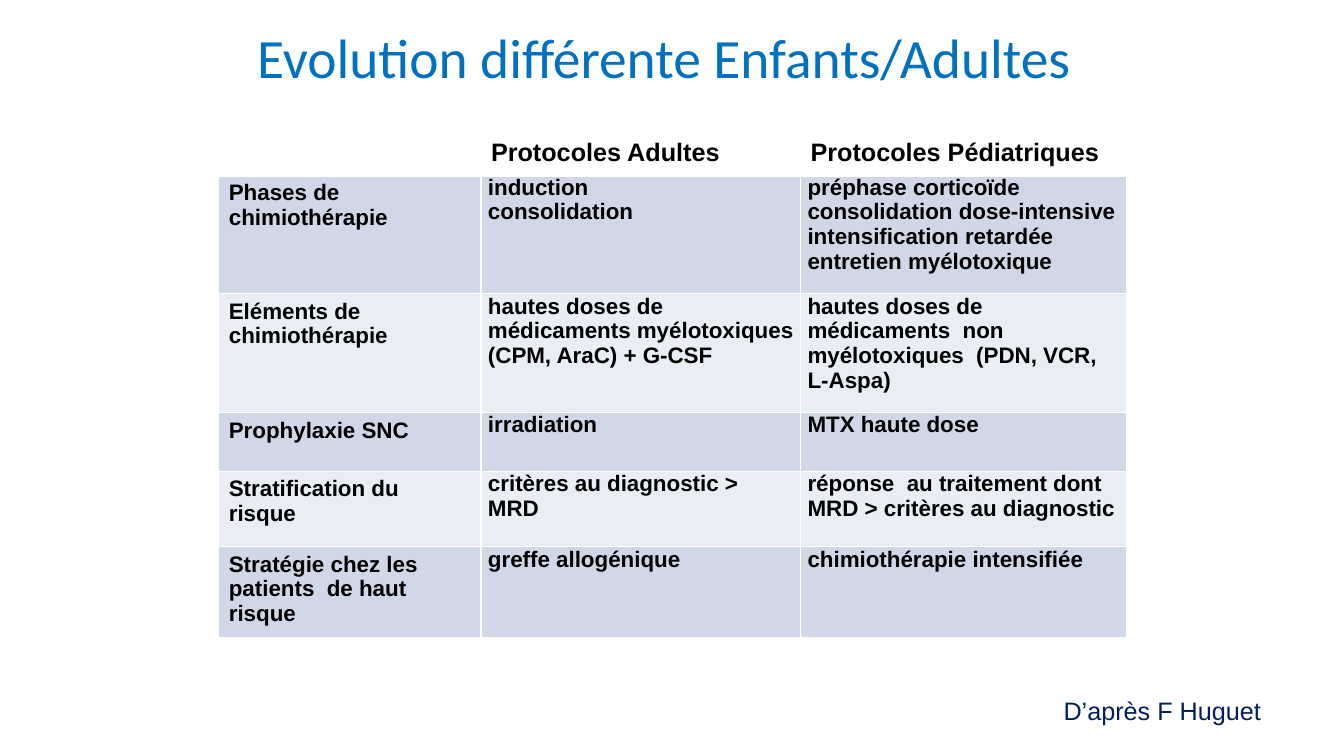
from lxml import etree
from pptx import Presentation
from pptx import util as u
from pptx.dml.color import RGBColor
from pptx.enum import text
from pptx.oxml import ns

WHITE = RGBColor(0xFF, 0xFF, 0xFF)
BLACK = RGBColor(0, 0, 0)
BLUE = RGBColor(0x00, 0x70, 0xC0)
NAVY = RGBColor(0x00, 0x20, 0x60)
BANDS = (RGBColor(0xD0, 0xD8, 0xE8), RGBColor(0xE9, 0xED, 0xF4))

COLUMN_WIDTHS = (2.6, 3.17, 3.23)
ROW_HEIGHTS = (0.4, 1.18, 1.18, 0.58, 0.75, 0.9)
LABEL_MARGINS = (0.1, 0.05)
DETAIL_MARGINS = (0.07, 0)

PROTOCOLS = (
    ("", "Protocoles Adultes", "Protocoles Pédiatriques"),
    ("Phases de chimiothérapie",
     "induction\nconsolidation",
     "préphase corticoïde\nconsolidation dose-intensive\n"
     "intensification retardée\nentretien myélotoxique"),
    ("Eléments de chimiothérapie",
     "hautes doses de médicaments myélotoxiques (CPM, AraC) + G-CSF",
     "hautes doses de médicaments  non myélotoxiques  (PDN, VCR, L-Aspa)"),
    ("Prophylaxie SNC", "irradiation", "MTX haute dose"),
    ("Stratification du risque",
     "critères au diagnostic > MRD",
     "réponse  au traitement dont MRD > critères au diagnostic"),
    ("Stratégie chez les patients  de haut risque",
     "greffe allogénique", "chimiothérapie intensifiée"),
)


def write(frame, words, size, color=BLACK, font="Arial", bold=False,
          align=text.PP_ALIGN.LEFT, spacing=1.0):
    """Fill a text frame, one paragraph per line of words."""
    frame.word_wrap = True
    frame.text = words
    for paragraph in frame.paragraphs:
        paragraph.alignment = align
        paragraph.line_spacing = spacing
        for run in paragraph.runs:
            run.font.name = font
            run.font.size = u.Pt(size)
            run.font.bold = bold
            run.font.color.rgb = color


def set_borders(cell, **widths):
    """White cell borders; widths in points, keyed by side letter."""
    properties = cell._tc.get_or_add_tcPr()
    for position, side in enumerate("LRTB"):
        line = etree.Element(ns.qn(f"a:ln{side}"), w=str(u.Pt(widths.get(side, 1))))
        fill = etree.SubElement(line, ns.qn("a:solidFill"))
        etree.SubElement(fill, ns.qn("a:srgbClr"), val=str(WHITE))
        properties.insert(position, line)


def add_title(slide, left, top, width, height):
    title = slide.shapes.title
    title.left, title.top = u.Inches(left), u.Inches(top)
    title.width, title.height = u.Inches(width), u.Inches(height)
    title.text_frame.vertical_anchor = text.MSO_ANCHOR.MIDDLE
    title.text_frame.auto_size = text.MSO_AUTO_SIZE.NONE
    write(title.text_frame, "Evolution différente Enfants/Adultes", 39.6,
          color=BLUE, font="Calibri", align=text.PP_ALIGN.CENTER, spacing=0.9)


def add_protocol_table(slide, left, top):
    frame = slide.shapes.add_table(
        len(ROW_HEIGHTS), len(COLUMN_WIDTHS), u.Inches(left), u.Inches(top),
        u.Inches(sum(COLUMN_WIDTHS)), u.Inches(sum(ROW_HEIGHTS)))
    table = frame.table
    table.first_row = table.horz_banding = False
    for column, width in zip(table.columns, COLUMN_WIDTHS):
        column.width = u.Inches(width)
    for row, height in zip(table.rows, ROW_HEIGHTS):
        row.height = u.Inches(height)

    for r, entries in enumerate(PROTOCOLS):
        for c, entry in enumerate(entries):
            cell = table.cell(r, c)
            is_label = r == 0 or c == 0
            side, edge = LABEL_MARGINS if is_label else DETAIL_MARGINS
            cell.margin_left = cell.margin_right = u.Inches(side)
            cell.margin_top = cell.margin_bottom = u.Inches(edge)
            write(cell.text_frame, entry, 18 if r == 0 else 16, bold=True)
            # Header row stays clear, body rows alternate
            if r == 0:
                cell.fill.background()
            else:
                cell.fill.solid()
                cell.fill.fore_color.rgb = BANDS[(r - 1) % 2]
            set_borders(cell, T=3 if r == 1 else 1, B=3 if r == 0 else 1)


def add_credit(slide, left, top, width, height):
    credit = slide.shapes.add_textbox(*map(u.Inches, (left, top, width, height)))
    write(credit.text_frame, "D’après F Huguet", 18, color=NAVY)


def main():
    deck = Presentation()
    deck.slide_width, deck.slide_height = u.Inches(13.33), u.Inches(7.5)
    slide = deck.slides.add_slide(deck.slide_layouts[5])
    add_title(slide, 0.43, 0.25, 12.31, 0.7)
    add_protocol_table(slide, 2.17, 1.33)
    add_credit(slide, 10.45, 6.85, 2.5, 0.4)
    deck.save("out.pptx")


if __name__ == "__main__":
    main()
